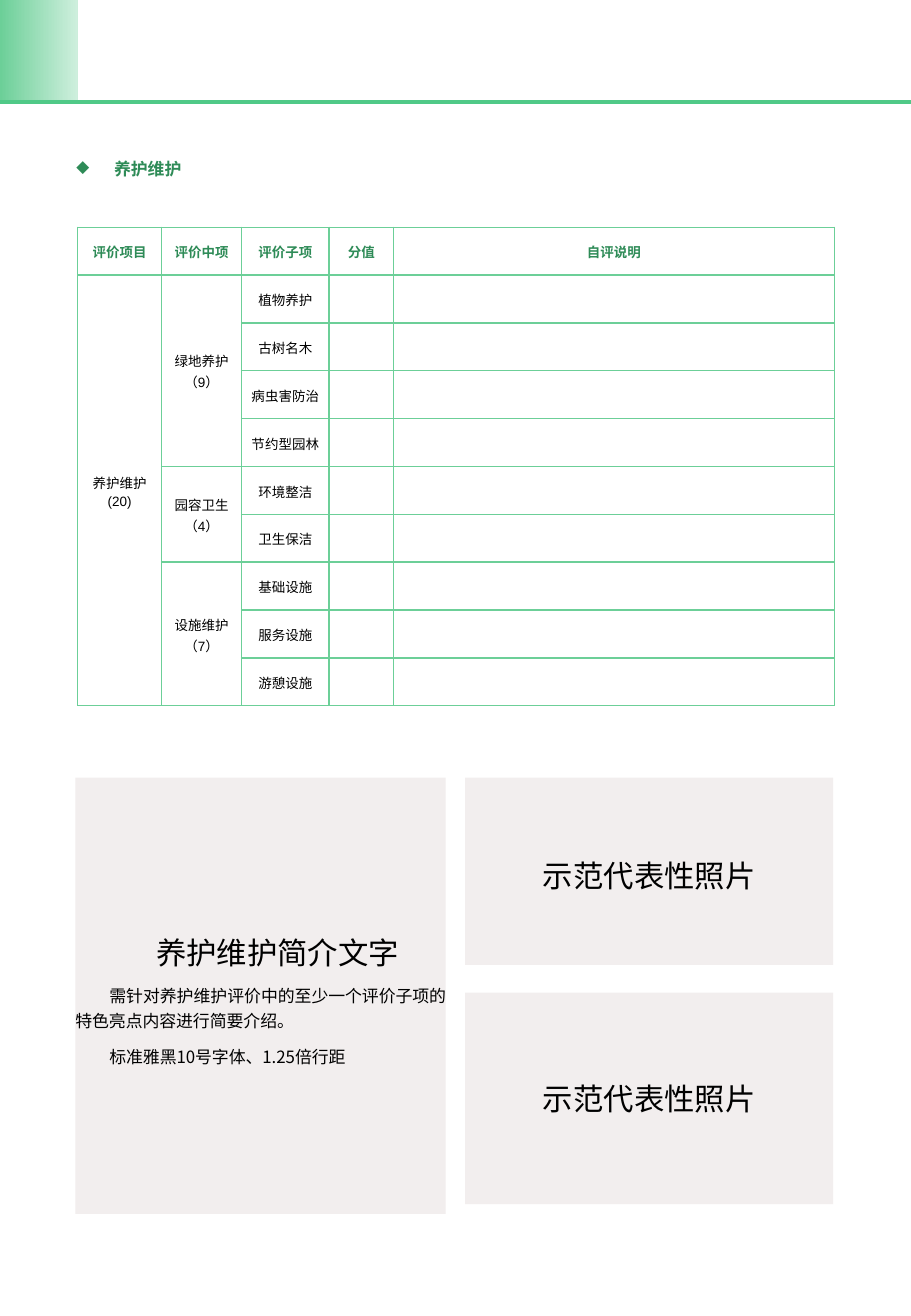
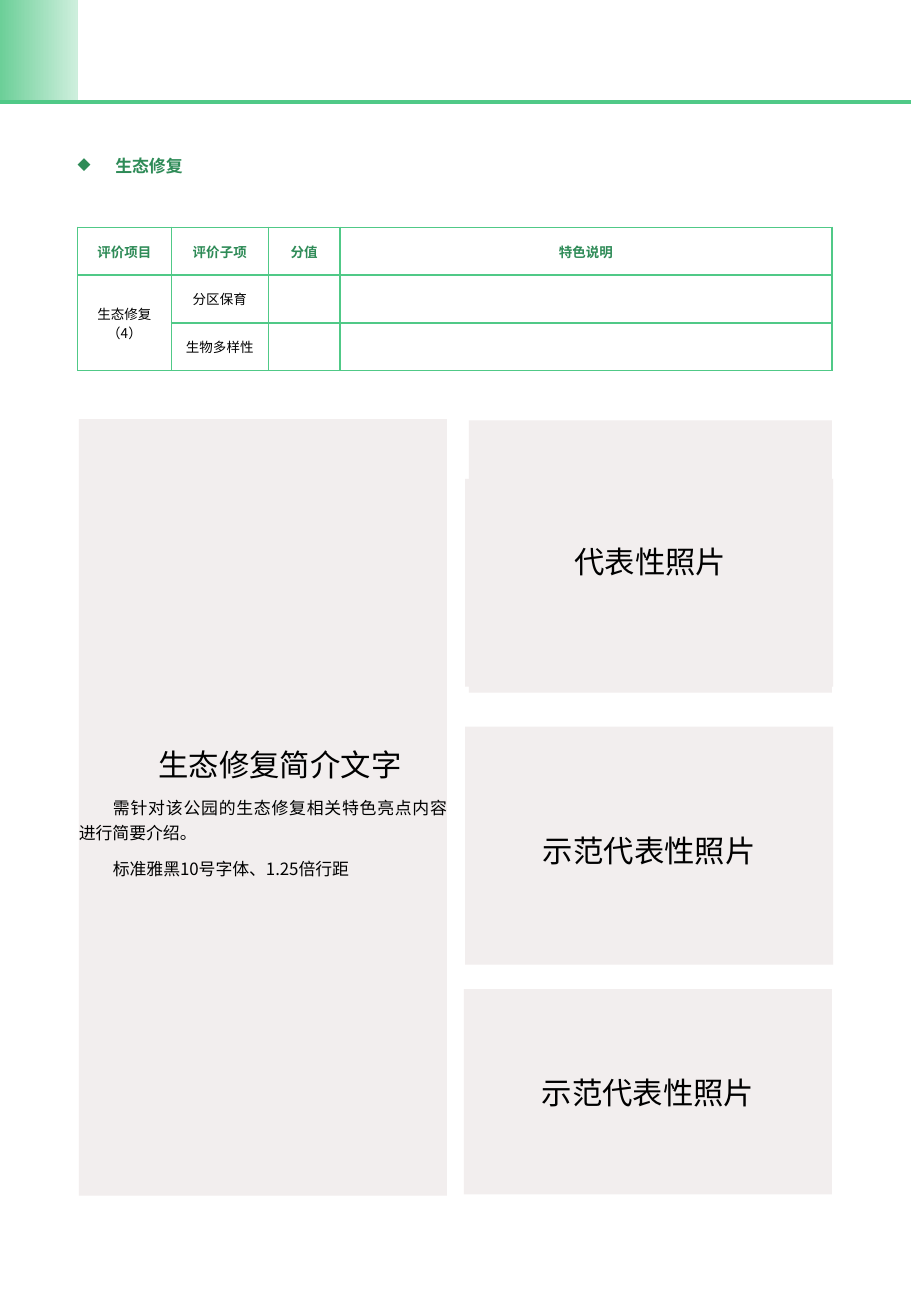
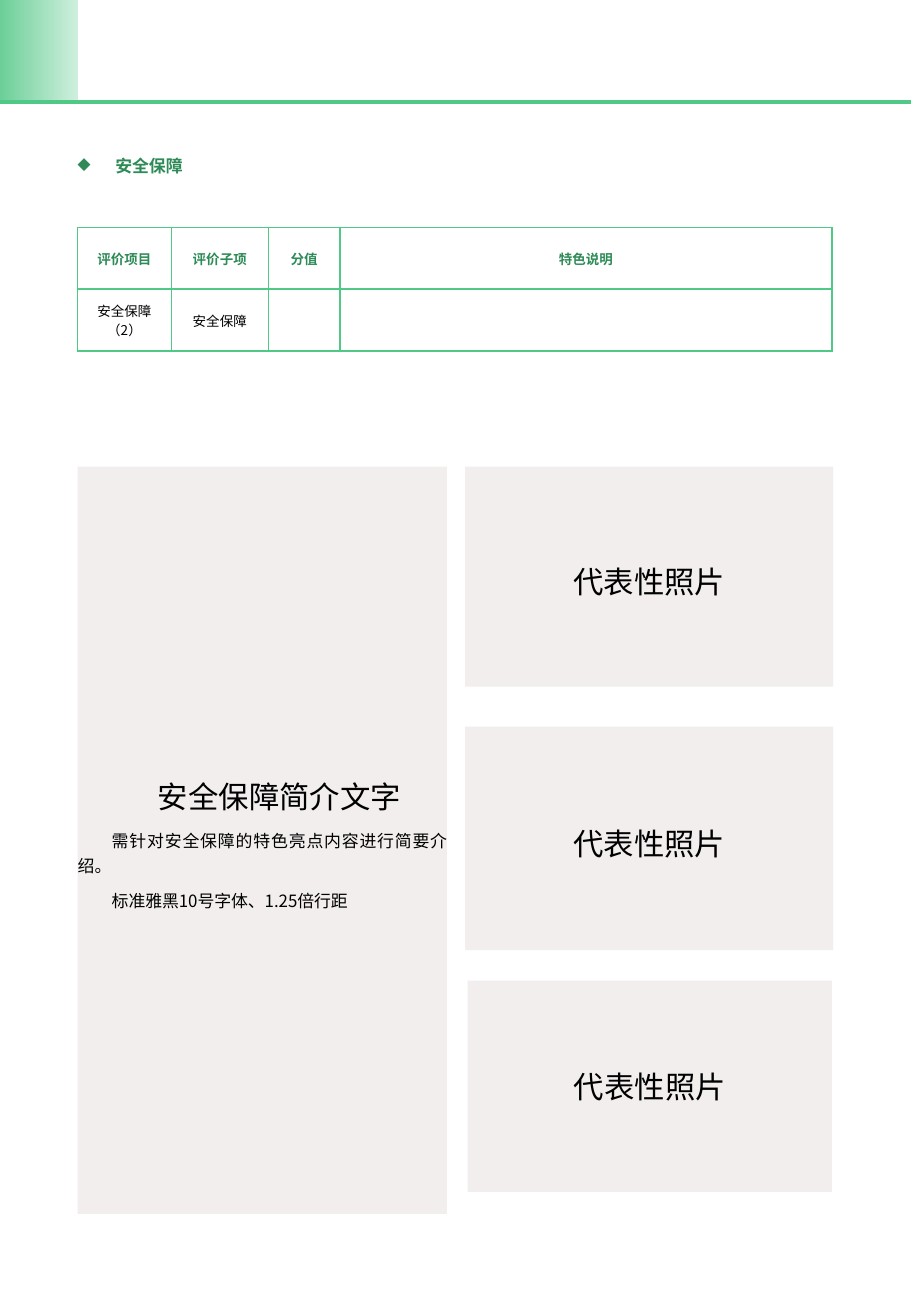
"""Build three park self-review pages, each with a score table, a brief and photo frames."""
import lxml.etree
import pptx
import pptx.dml.color
import pptx.enum.shapes
import pptx.enum.text
import pptx.oxml.ns
import pptx.util

Inches = pptx.util.Inches
Pt = pptx.util.Pt
Align = pptx.enum.text.PP_ALIGN
Mid = pptx.enum.text.MSO_ANCHOR.MIDDLE
qn = pptx.oxml.ns.qn

HUES = {"leaf": "6CCF98", "pale": "CEEFDD", "green": "50C987",
        "deep": "2E8B57", "panel": "F2EEEE", "ink": "000000"}
SANS = "Noto Sans CJK SC"


def hue(name):
    return pptx.dml.color.RGBColor.from_string(HUES[name])


def node(root, tag, **attrs):
    return lxml.etree.SubElement(root, qn(tag), attrs)


class Deck:
    def __init__(self):
        self.prs = pptx.Presentation()
        self.prs.slide_width = Inches(7.5)
        self.prs.slide_height = Inches(10.83)

    def page(self):
        self.slide = self.prs.slides.add_slide(self.prs.slide_layouts[6])
        band = self.rect((0, 0, 0.64, 0.84))
        band.fill.gradient()
        band.fill.gradient_angle = 0
        for stop, name, at in zip(band.fill.gradient_stops, ("leaf", "pale"), (0, 1)):
            stop.color.rgb = hue(name)
            stop.position = at
        rule = self.slide.shapes.add_connector(
            pptx.enum.shapes.MSO_CONNECTOR.STRAIGHT,
            Inches(-0.01), Inches(0.84), Inches(7.52), Inches(0.84))
        rule.line.color.rgb = hue("green")
        rule.line.width = Pt(2.5)
        node(rule._element.spPr, "a:effectLst")

    def rect(self, box):
        shape = self.slide.shapes.add_shape(
            pptx.enum.shapes.MSO_SHAPE.RECTANGLE, *map(Inches, box))
        shape.shadow.inherit = False
        shape.line.fill.background()
        return shape

    def frame(self, shape):
        frame = shape.text_frame
        frame.word_wrap = True
        frame.margin_left = frame.margin_right = 0
        frame.margin_top = frame.margin_bottom = 0
        return frame

    def style(self, para, size, color="ink", bold=False, font=SANS,
              align=Align.CENTER, space=None, after=None):
        para.alignment = align
        if space:
            para.line_spacing = space
        if after:
            para.space_after = Pt(after)
        for run in para.runs:
            run.font.size = Pt(size)
            run.font.bold = bold
            run.font.name = font
            run.font.color.rgb = hue(color)
            node(run._r.get_or_add_rPr(), "a:ea", typeface=SANS)

    def indent(self, para, left, first):
        props = para._p.get_or_add_pPr()
        props.set("marL", str(Inches(left)))
        props.set("indent", str(Inches(first)))
        return props

    def title(self, text, box):
        shape = self.slide.shapes.add_textbox(*map(Inches, box))
        frame = self.frame(shape)
        frame.auto_size = pptx.enum.text.MSO_AUTO_SIZE.SHAPE_TO_FIT_TEXT
        frame.text = text
        para = frame.paragraphs[0]
        node(self.indent(para, 0.31, -0.31), "a:buChar", char="◆")
        self.style(para, 10, "deep", True, align=Align.JUSTIFY, space=1.25, after=12)

    def panel(self, text, box):
        shape = self.rect(box)
        shape.fill.solid()
        shape.fill.fore_color.rgb = hue("panel")
        frame = self.frame(shape)
        frame.vertical_anchor = Mid
        frame.text = text
        return frame.paragraphs

    def brief(self, topic, note, box):
        lines = (f"{topic}简介文字", note, "标准雅黑10号字体、1.25倍行距")
        for i, para in enumerate(self.panel("\n".join(lines), box)):
            self.indent(para, 0, 0.28)
            self.style(para, 10 if i else 18, space=1.25, after=6,
                       align=Align.JUSTIFY if i else Align.CENTER)

    def photos(self, items):
        for text, box in items:
            para = self.panel(text, box)[0]
            if box == items[-1][1]:
                self.style(para, 18)
            else:
                self.style(para, 18, space=1.25, after=6)

    def edge(self, cell, color):
        props = cell._tc.get_or_add_tcPr()
        for i, side in enumerate(("a:lnL", "a:lnR", "a:lnT", "a:lnB")):
            line = lxml.etree.Element(qn(side), w=str(Pt(1)))
            node(node(line, "a:solidFill"), "a:srgbClr", val=HUES[color])
            props.insert(i, line)

    def table(self, rows, cols, high, spans=(), color="green", font=SANS, space=None):
        shape = self.slide.shapes.add_table(
            len(rows), len(cols), Inches(0.64), Inches(1.87),
            Inches(sum(cols)), Inches(high * len(rows)))
        grid = shape.table
        grid.first_row = grid.horz_banding = False
        for col, wide in zip(grid.columns, cols):
            col.width = Inches(wide)
        for r, row in enumerate(rows):
            grid.rows[r].height = Inches(high)
            for c in range(len(cols)):
                cell = grid.cell(r, c)
                cell.margin_left = cell.margin_right = Inches(0.07)
                cell.margin_top = cell.margin_bottom = Inches(0.05)
                cell.vertical_anchor = Mid
                cell.fill.background()
                self.edge(cell, color)
                text = row[c] if c < len(row) else ""
                if not text:
                    node(cell.text_frame.paragraphs[0]._p, "a:endParaRPr", sz="800")
                    continue
                cell.text_frame.text = text
                for para in cell.text_frame.paragraphs:
                    self.style(para, 8, "ink" if r else "deep", r == 0, font,
                               space=space if r else 1.07)
        for top, col, last in spans:
            grid.cell(top, col).merge(grid.cell(last, col))


def main():
    deck = Deck()
    shot, demo = "代表性照片", "示范代表性照片"
    head = ("评价项目", "评价子项", "分值", "特色说明")
    cols = (0.77, 0.8, 0.59, 4.05)

    deck.page()
    deck.brief("养护维护", "需针对养护维护评价中的至少一个评价子项的特色亮点内容进行简要介绍。",
               (0.62, 6.4, 3.05, 3.59))
    deck.title("养护维护", (0.63, 1.26, 3.03, 0.19))
    rows = [
        ("评价项目", "评价中项", "评价子项", "分值", "自评说明"),
        ("养护维护\n(20)", "绿地养护（9）", "植物养护"),
        ("", "", "古树名木"),
        ("", "", "病虫害防治"),
        ("", "", "节约型园林"),
        ("", "园容卫生（4）", "环境整洁"),
        ("", "", "卫生保洁"),
        ("", "设施维护（7）", "基础设施"),
        ("", "", "服务设施"),
        ("", "", "游憩设施"),
    ]
    deck.table(rows, (0.69, 0.66, 0.72, 0.53, 3.63), 0.394,
               ((1, 0, 9), (1, 1, 4), (5, 1, 6), (7, 1, 9)), "leaf", "Arial", 1.07)
    deck.photos([(demo, (3.83, 6.4, 3.03, 1.54)), (demo, (3.83, 8.17, 3.03, 1.74))])

    deck.page()
    deck.title("生态修复", (0.64, 1.24, 2.63, 0.21))
    rows = [head, ("生态修复\n（4）", "分区保育"), ("", "生物多样性")]
    deck.table(rows, cols, 0.394, ((1, 0, 2),))
    deck.brief("生态修复", "需针对该公园的生态修复相关特色亮点内容进行简要介绍。",
               (0.65, 3.45, 3.03, 6.39))
    deck.photos([("", (3.83, 3.94, 3.03, 1.71)), (shot, (3.86, 3.46, 2.99, 2.24)),
                 (demo, (3.83, 5.98, 3.03, 1.96)), (demo, (3.82, 8.14, 3.03, 1.69))])

    deck.page()
    deck.title("安全保障", (0.64, 1.24, 3.03, 0.21))
    deck.table([head, ("安全保障（2）", "安全保障")], cols, 0.51)
    deck.brief("安全保障", "需针对安全保障的特色亮点内容进行简要介绍。",
               (0.64, 3.84, 3.04, 6.15))
    deck.photos([(shot, (3.83, 3.84, 3.03, 1.81)), (shot, (3.83, 5.98, 3.03, 1.84)),
                 (shot, (3.85, 8.07, 3, 1.74))])

    deck.prs.save("out.pptx")


if __name__ == "__main__":
    main()
